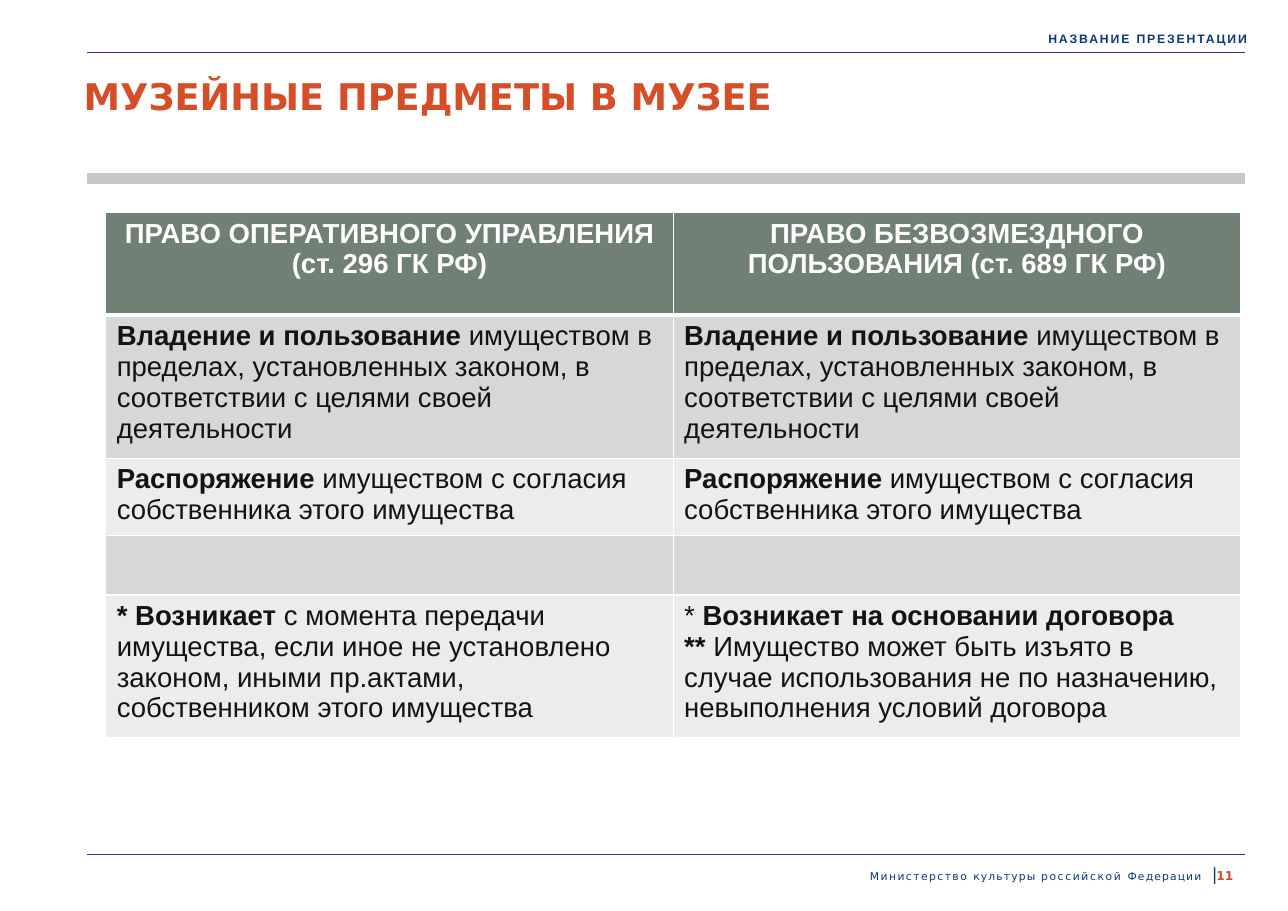
from dataclasses import dataclass

from lxml import etree
from pptx import Presentation
from pptx.dml.color import RGBColor
from pptx.enum.shapes import MSO_CONNECTOR
from pptx.enum.text import PP_ALIGN
from pptx.oxml.ns import qn
from pptx.util import Inches, Pt

LEFT, CENTER, RIGHT = PP_ALIGN.LEFT, PP_ALIGN.CENTER, PP_ALIGN.RIGHT
STRAIGHT = MSO_CONNECTOR.STRAIGHT


@dataclass(frozen=True)
class Theme:
    sans: str = "Arial"
    display: str = "DejaVu Sans"
    navy: str = "0A387A"
    rule: str = "2A3795"
    bar: str = "C6C9CA"
    accent: str = "D54E28"
    ink: str = "141313"
    white: str = "FFFFFF"
    head: str = "708074"
    bands: tuple = ("D5D8D6", "EBEDEB")
    title: float = 24
    body: float = 18
    small: float = 8
    footer: float = 7
    divider: float = 11


T = Theme()
RULE_LEFT, RULE_RIGHT = 0.79, 11.3
ROW_HEIGHTS = (0.93, 1.2, 0.66, 0.54, 1.22)
COLUMN_WIDTH = 5.15

# Table text: cell > paragraphs > (text, bold)
HEADS = ("ПРАВО ОПЕРАТИВНОГО УПРАВЛЕНИЯ (ст. 296 ГК РФ)",
         "ПРАВО БЕЗВОЗМЕЗДНОГО ПОЛЬЗОВАНИЯ (ст. 689 ГК РФ)")
POSSESSION = [[("Владение и пользование ", True),
               ("имуществом в пределах, установленных законом, в "
                "соответствии с целями своей деятельности", False)]]
DISPOSAL = [[("Распоряжение ", True),
             ("имуществом с согласия собственника этого имущества", False)]]
EMPTY = [[]]
ORIGIN_LAW = [[("* Возникает", True),
               (" с момента передачи имущества, если иное не установлено "
                "законом, иными пр.актами, собственником этого имущества",
                False)]]
ORIGIN_CONTRACT = [[("* ", False), ("Возникает на основании договора", True)],
                   [("** ", True),
                    ("Имущество может быть изъято в случае использования не "
                     "по назначению, невыполнения условий договора", False)]]
ROWS = [
    [[[(head, True)]] for head in HEADS],
    [POSSESSION] * 2,
    [DISPOSAL] * 2,
    [EMPTY] * 2,
    [ORIGIN_LAW, ORIGIN_CONTRACT],
]


def rgb(color):
    return RGBColor.from_string(color)


def add_run(p, text, size, font, color, bold=False, spacing=0):
    r = p.add_run()
    r.text = text
    r.font.size, r.font.name, r.font.bold = Pt(size), font, bold
    r.font.color.rgb = rgb(color)
    if spacing:
        r._r.get_or_add_rPr().set("spc", str(round(spacing * 100)))


def add_text(slide, box, align=LEFT, line_spacing=None):
    """Add an unpadded text box and return its paragraph."""
    tf = slide.shapes.add_textbox(*map(Inches, box)).text_frame
    tf.margin_left = tf.margin_top = tf.margin_right = tf.margin_bottom = 0
    tf.word_wrap = True
    p = tf.paragraphs[0]
    p.alignment = align
    if line_spacing:
        p.line_spacing = Pt(line_spacing)
    return p


def add_rule(slide, y, color, width):
    line = slide.shapes.add_connector(
        STRAIGHT, Inches(RULE_LEFT), Inches(y), Inches(RULE_RIGHT), Inches(y))
    line.line.color.rgb = rgb(color)
    line.line.width = Pt(width)
    etree.SubElement(line._element.spPr, qn("a:effectLst"))


def set_borders(cell, bottom, top):
    tcPr = cell._tc.get_or_add_tcPr()
    for side, width in (("L", 1), ("R", 1), ("T", top), ("B", bottom)):
        ln = etree.SubElement(tcPr, qn(f"a:ln{side}"), w=str(Pt(width)))
        fill = etree.SubElement(ln, qn("a:solidFill"))
        etree.SubElement(fill, qn("a:srgbClr"), val=T.white)


def fill_cell(cell, paragraphs, row):
    is_head = row == 0
    set_borders(cell, bottom=3 if is_head else 1, top=3 if row == 1 else 1)
    cell.fill.solid()
    cell.fill.fore_color.rgb = rgb(T.head if is_head else T.bands[(row - 1) % 2])
    tf = cell.text_frame
    for i, runs in enumerate(paragraphs):
        p = tf.add_paragraph() if i else tf.paragraphs[0]
        p.alignment = CENTER if is_head else LEFT
        p.font.size = Pt(T.body)
        for text, bold in runs:
            add_run(p, text, T.body, T.sans, T.white if is_head else T.ink, bold)


def add_rights_table(slide):
    table = slide.shapes.add_table(
        len(ROWS), 2, Inches(0.96), Inches(1.93),
        Inches(2 * COLUMN_WIDTH), Inches(sum(ROW_HEIGHTS))).table
    for column in table.columns:
        column.width = Inches(COLUMN_WIDTH)
    for i, (height, cells) in enumerate(zip(ROW_HEIGHTS, ROWS)):
        table.rows[i].height = Inches(height)
        for j, paragraphs in enumerate(cells):
            fill_cell(table.cell(i, j), paragraphs, i)


def main():
    prs = Presentation()
    prs.slide_width, prs.slide_height = Inches(11.69), Inches(8.27)
    slide = prs.slides.add_slide(prs.slide_layouts[6])

    # Rules
    add_rule(slide, 7.76, T.rule, 0.5)
    add_rule(slide, 0.48, T.rule, 0.5)
    add_rule(slide, 1.62, T.bar, 7)

    # Header and title
    p = add_text(slide, (7.5, 0.28, 3.82, 0.13), RIGHT)
    add_run(p, "НАЗВАНИЕ ПРЕЗЕНТАЦИИ", T.small, T.sans, T.navy, True, 1.2)
    p = add_text(slide, (0.76, 0.67, 10.58, 0.4))
    add_run(p, "МУЗЕЙНЫЕ ПРЕДМЕТЫ В МУЗЕЕ", T.title, T.display, T.accent, True)

    # Footer: the last space is widened to set off the divider
    p = add_text(slide, (7.85, 7.85, 3.2, 0.18), RIGHT, 12.3)
    for text, size, spacing in (("Министерство ", T.footer, 1),
                                ("культуры ", T.footer, 0.8),
                                ("российской ", T.footer, 1.1),
                                ("Федерации", T.footer, 0.8),
                                (" ", T.footer, 3.8),
                                ("|", T.divider, -0.1)):
        add_run(p, text, size, T.display, T.navy, spacing=spacing)
    p = add_text(slide, (11.04, 7.89, 0.22, 0.13), line_spacing=9.2)
    add_run(p, "11", T.small, T.display, T.accent, True)

    # Comparison of the two rights
    add_rights_table(slide)

    prs.save("out.pptx")


if __name__ == "__main__":
    main()
